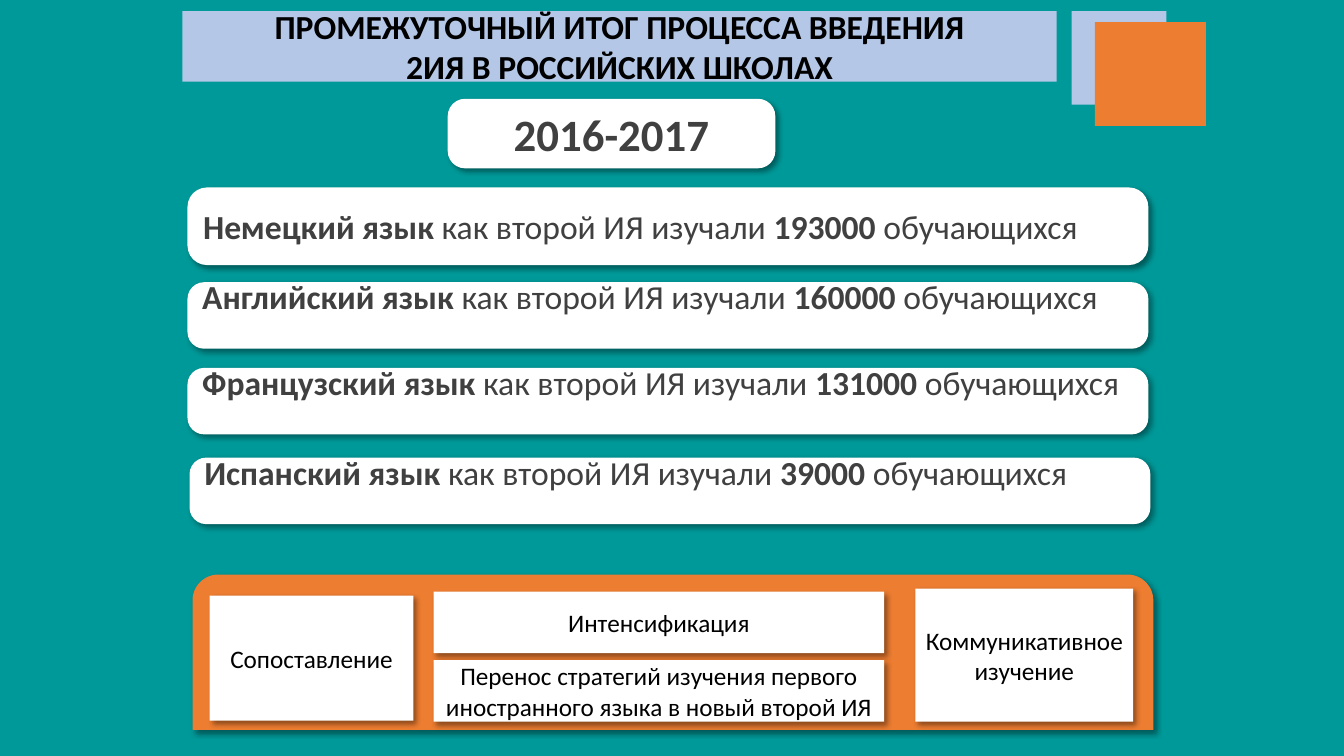
from dataclasses import dataclass
from lxml import etree
from pptx import Presentation
from pptx.dml.color import RGBColor as Rgb
from pptx.enum.shapes import MSO_SHAPE as Kind
from pptx.enum.text import MSO_ANCHOR as Anchor, MSO_AUTO_SIZE as Fit, PP_ALIGN as Align
from pptx.oxml.ns import qn
from pptx.util import Inches, Pt


@dataclass(frozen=True)
class Theme:
    font: str = "Calibri"
    back: str = "009999"
    pale: str = "B4C7E7"
    warm: str = "ED7D31"
    white: str = "FFFFFF"
    black: str = "000000"
    gray: str = "404040"
    year: int = 32
    head: int = 24
    note: int = 18


THEME = Theme()


def paint(shape, color):
    shape.fill.solid()
    shape.fill.fore_color.rgb = Rgb.from_string(color)
    shape.line.fill.background()


def shade(shape):
    effects = shape._element.spPr.find(qn("a:effectLst"))
    outer = etree.SubElement(effects, qn("a:outerShdw"), blurRad=str(Pt(4)),
                             dist=str(Pt(3)), dir="2700000", algn="tl", rotWithShape="0")
    color = etree.SubElement(outer, qn("a:srgbClr"), val=THEME.black)
    etree.SubElement(color, qn("a:alpha"), val="40000")


def block(slide, kind, area, color, cast=True):
    shape = slide.shapes.add_shape(kind, *map(Inches, area))
    shape.shadow.inherit = False
    paint(shape, color)
    if cast:
        shade(shape)
    return shape


def write(para, parts, size, color, align=Align.CENTER):
    para.alignment = align
    for text, bold in parts:
        run = para.add_run()
        run.text = text
        font = run.font
        font.name, font.size, font.bold = THEME.font, Pt(size), bold
        font.color.rgb = Rgb.from_string(color)


def frame(shape):
    text = shape.text_frame
    text.word_wrap = True
    text.auto_size = Fit.NONE
    text.vertical_anchor = Anchor.MIDDLE
    return text


def title(slide, area, lines):
    shape = slide.shapes.title
    shape.left, shape.top, shape.width, shape.height = map(Inches, area)
    paint(shape, THEME.pale)
    text = frame(shape)
    for line in lines:
        para = text.paragraphs[0] if line == lines[0] else text.add_paragraph()
        write(para, [(line, True)], THEME.head, THEME.black)


def pill(slide, area):
    shape = block(slide, Kind.ROUNDED_RECTANGLE, area, THEME.white)
    shape.adjustments[0] = 0.25
    return frame(shape)


def bar(slide, left, top, height, tongue, count, raised):
    text = pill(slide, (left, top, 9.53, height))
    if raised:
        text.margin_top, text.margin_bottom = Inches(0), Inches(0.38)
    parts = [(tongue + " язык ", True), ("как второй ИЯ изучали ", False),
             (count, True), (" обучающихся", False)]
    write(text.paragraphs[0], parts, THEME.head, THEME.gray, Align.LEFT)


def card(slide, area, label):
    text = frame(block(slide, Kind.RECTANGLE, area, THEME.white))
    write(text.paragraphs[0], [(label, False)], THEME.note, THEME.black)


def main():
    deck = Presentation()
    deck.slide_width, deck.slide_height = Inches(13.33), Inches(7.5)
    slide = deck.slides.add_slide(deck.slide_layouts[5])
    slide.background.fill.solid()
    slide.background.fill.fore_color.rgb = Rgb.from_string(THEME.back)

    title(slide, (1.81, 0.11, 8.67, 0.7),
          ["ПРОМЕЖУТОЧНЫЙ ИТОГ ПРОЦЕССА ВВЕДЕНИЯ", "2ИЯ В РОССИЙСКИХ ШКОЛАХ"])
    block(slide, Kind.RECTANGLE, (10.63, 0.11, 0.94, 0.93), THEME.pale, False)
    block(slide, Kind.RECTANGLE, (10.86, 0.22, 1.1, 1.03), THEME.warm, False)

    year = pill(slide, (4.44, 0.98, 3.25, 0.69))
    write(year.paragraphs[0], [("2016-2017", True)], THEME.year, THEME.gray)

    for row in [(1.86, 1.86, 0.77, "Немецкий", "193000", False),
                (1.86, 2.8, 0.66, "Английский", "160000", True),
                (1.86, 3.65, 0.66, "Французский", "131000", True),
                (1.88, 4.54, 0.66, "Испанский", "39000", True)]:
        bar(slide, *row)

    block(slide, Kind.ROUND_2_SAME_RECTANGLE, (1.91, 5.7, 9.53, 1.54), THEME.warm)
    for area, label in [
        ((2.08, 5.91, 2.02, 1.24), "Сопоставление"),
        ((4.3, 5.87, 4.47, 0.61), "Интенсификация"),
        ((4.3, 6.55, 4.47, 0.61),
         "Перенос стратегий изучения первого иностранного языка в новый второй ИЯ"),
        ((9.08, 5.84, 2.16, 1.32), "Коммуникативное изучение"),
    ]:
        card(slide, area, label)

    deck.save("out.pptx")


if __name__ == "__main__":
    main()
